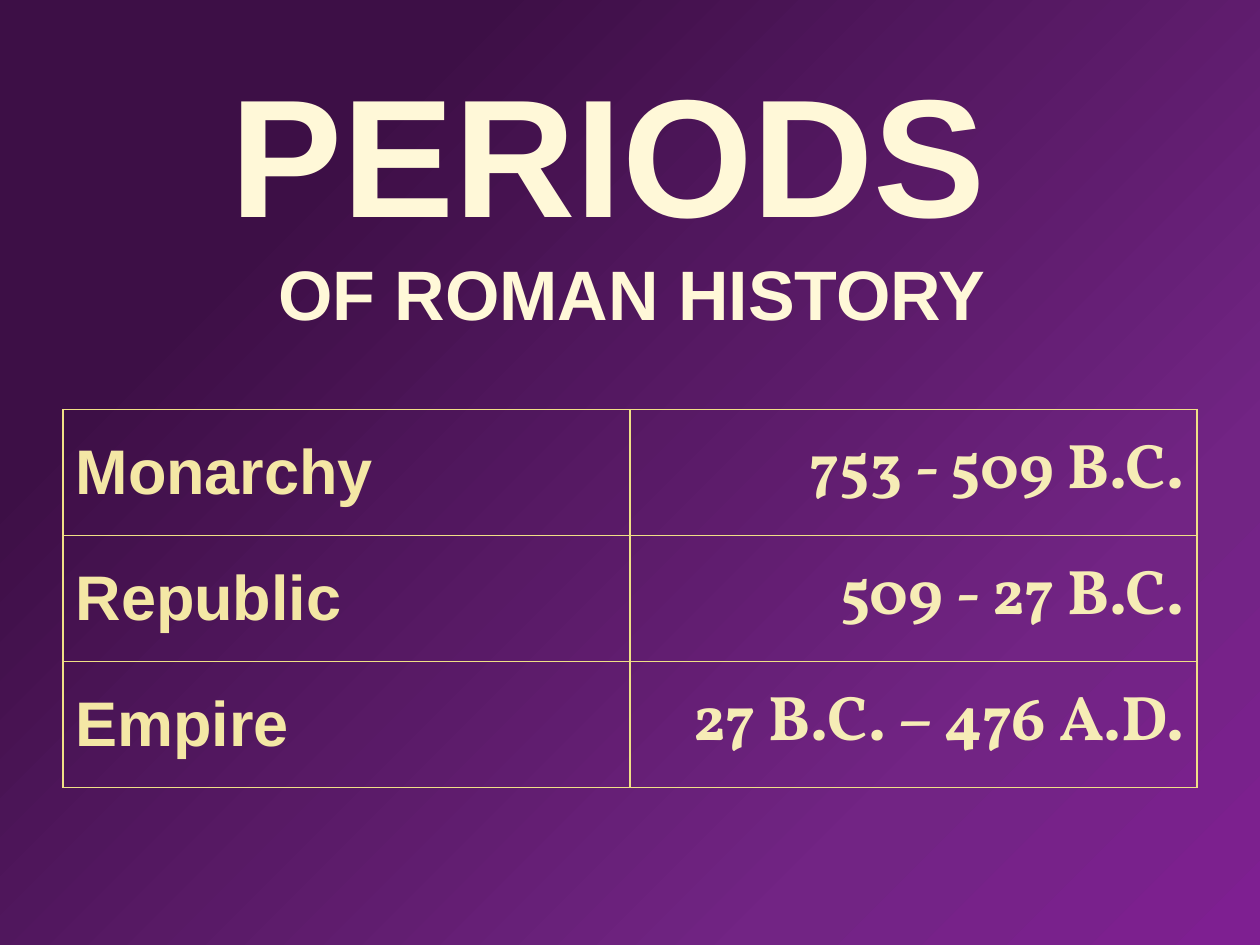
from copy import deepcopy
from lxml import etree
from pptx import Presentation
from pptx.dml.color import RGBColor
from pptx.enum.text import MSO_ANCHOR, PP_ALIGN
from pptx.oxml.ns import qn
from pptx.util import Pt

LEFT, MID, RIGHT = PP_ALIGN.LEFT, PP_ALIGN.CENTER, PP_ALIGN.RIGHT
MIDDLE = MSO_ANCHOR.MIDDLE

CREAM = RGBColor(0xFF, 0xF8, 0xD8)
GOLD = RGBColor(0xF4, 0xE7, 0xA5)
PALE = RGBColor(0xF6, 0xEC, 0xB6)
EDGE = RGBColor(0xF0, 0xE0, 0x86)
STOPS = [
    (0.22, RGBColor(0x3D, 0x0F, 0x46)),
    (0.77, RGBColor(0x72, 0x24, 0x84)),
    (1, RGBColor(0x7E, 0x1F, 0x91)),
]

TITLE = [("PERIODS ", 96), ("OF ROMAN HISTORY", 40)]
PERIODS = [
    ("Monarchy", "753 - 509 B.C."),
    ("Republic", "509 - 27 B.C."),
    ("Empire", "27 B.C. – 476 A.D."),
]
STYLES = [
    dict(font="Arial", color=GOLD, align=LEFT),
    dict(font="Vollkorn", color=PALE, align=RIGHT),
]
COL, ROW = 324, 72


def write(para, text, size=36, font="Arial", color=CREAM, align=LEFT):
    para.alignment = align
    run = para.add_run()
    run.text = text
    run.font.size = Pt(size)
    run.font.name = font
    run.font.bold = True
    run.font.color.rgb = color


def paint(slide):
    fill = slide.background.fill
    fill.gradient()
    fill.gradient_angle = 315
    stops = slide.element.find(".//" + qn("a:gsLst"))
    stops.append(deepcopy(stops[-1]))
    for stop, (place, color) in zip(fill.gradient_stops, STOPS):
        stop.position = place
        stop.color.rgb = color


def frame(cell):
    cell.fill.background()
    props = cell._tc.get_or_add_tcPr()
    for spot, side in enumerate(("lnL", "lnR", "lnT", "lnB")):
        line = etree.Element(qn("a:" + side), w=str(Pt(1)))
        solid = etree.SubElement(line, qn("a:solidFill"))
        etree.SubElement(solid, qn("a:srgbClr"), val=str(EDGE))
        props.insert(spot, line)


deck = Presentation()
deck.slide_width, deck.slide_height = Pt(720), Pt(540)
slide = deck.slides.add_slide(deck.slide_layouts[6])
paint(slide)

box = slide.shapes.add_textbox(Pt(25.2), Pt(21.6), Pt(671.76), Pt(176.4))
body = box.text_frame
body.word_wrap = True
body.vertical_anchor = MIDDLE
head = body.paragraphs[0]
for num, (text, size) in enumerate(TITLE):
    if num:
        head.add_line_break()
    write(head, text, size=size, align=MID)

rows, cols = len(PERIODS), len(STYLES)
grid = slide.shapes.add_table(
    rows, cols, Pt(36), Pt(234), Pt(COL * cols), Pt(ROW * rows)
).table
grid.first_row = grid.horz_banding = False
for r, period in enumerate(PERIODS):
    for c, (text, style) in enumerate(zip(period, STYLES)):
        cell = grid.cell(r, c)
        cell.vertical_anchor = MIDDLE
        frame(cell)
        write(cell.text_frame.paragraphs[0], text, **style)

deck.save("out.pptx")
